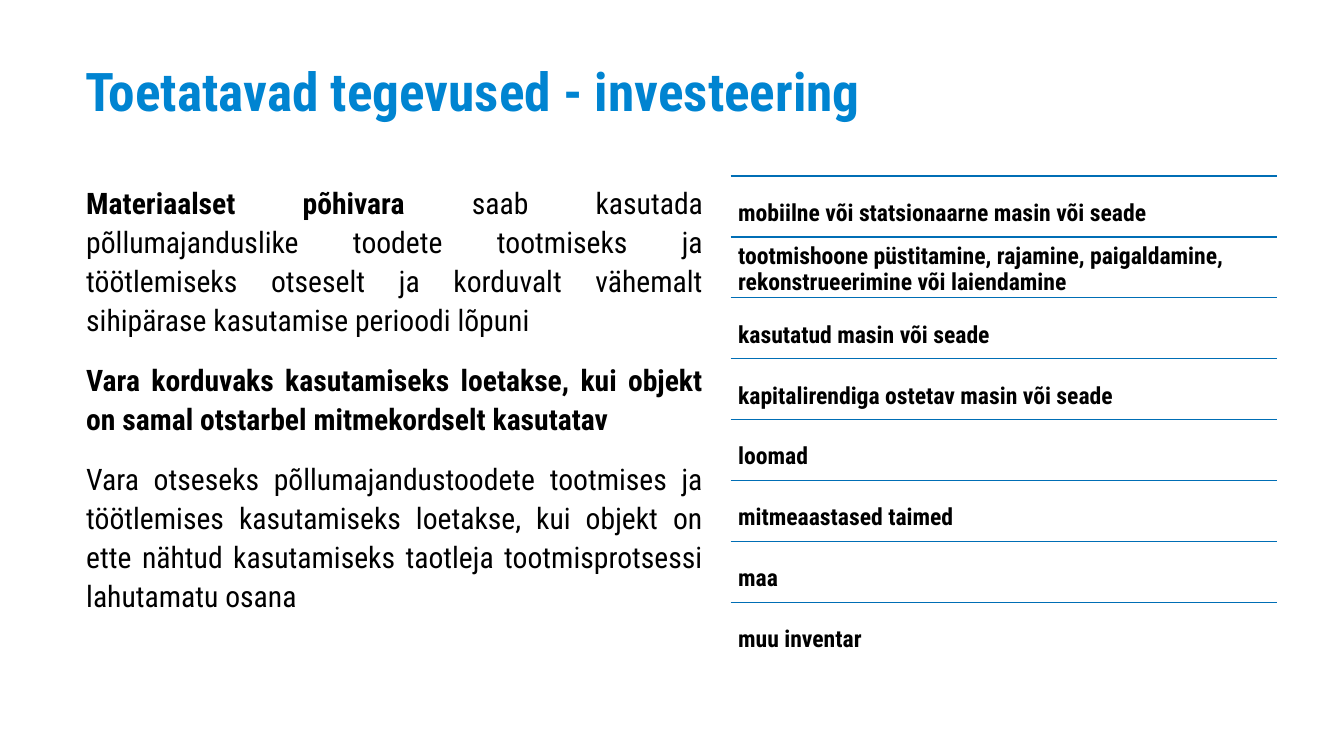
from dataclasses import dataclass

from lxml import etree
from pptx import Presentation
from pptx.dml.color import RGBColor
from pptx.enum.shapes import MSO_CONNECTOR
from pptx.enum.text import MSO_ANCHOR, PP_ALIGN
from pptx.oxml.ns import qn
from pptx.util import Emu, Pt

STRAIGHT = MSO_CONNECTOR.STRAIGHT
TOP = MSO_ANCHOR.TOP
LEFT = PP_ALIGN.LEFT
JUSTIFY = PP_ALIGN.JUSTIFY

TITLE = "Toetatavad tegevused - investeering"
BODY = [
    [
        ("Materiaalset põhivara ", True),
        ("saab kasutada põllumajanduslike toodete tootmiseks ja töötlemiseks "
         "otseselt ja korduvalt vähemalt sihipärase kasutamise perioodi lõpuni", False),
    ],
    [("Vara korduvaks kasutamiseks loetakse, kui objekt on samal otstarbel "
      "mitmekordselt kasutatav", True)],
    [("Vara otseseks põllumajandustoodete tootmises ja töötlemises kasutamiseks "
      "loetakse, kui objekt on ette nähtud kasutamiseks taotleja tootmisprotsessi "
      "lahutamatu osana", False)],
]
ITEMS = [
    ("mobiilne või statsionaarne masin või seade", 1.5),
    ("tootmishoone püstitamine, rajamine, paigaldamine, "
     "rekonstrueerimine või laiendamine", 0.9),
    ("kasutatud masin või seade", 1.5),
    ("kapitalirendiga ostetav masin või seade", 1.5),
    ("loomad", 1.5),
    ("mitmeaastased taimed", 1.5),
    ("maa", 1.5),
    ("muu inventar", 1.5),
]

SLIDE = (1260, 709)
TITLE_BOX = (70, 56, 1109, 112)
BODY_BOX = (71, 165, 598, 468)
LIST_BOX = (685, 165, 512, 457)


@dataclass(frozen=True)
class Theme:
    font: str = "Roboto Condensed"
    head: RGBColor = RGBColor(0x00, 0x84, 0xD1)
    text: RGBColor = RGBColor(0x00, 0x00, 0x00)
    rule: RGBColor = RGBColor(0x00, 0x6E, 0xB5)
    head_size: int = 36
    body_size: int = 20
    item_size: int = 16


THEME = Theme()


def px(n):
    return Emu(round(n * 9144))


def add_text(slide, box, paras, size, color, spacing, pads, align=LEFT, after=0):
    frame = slide.shapes.add_textbox(*map(px, box)).text_frame
    frame.word_wrap = True
    frame.vertical_anchor = TOP
    frame.margin_left = frame.margin_right = px(pads[0])
    frame.margin_top, frame.margin_bottom = px(pads[1]), px(pads[2])
    for i, parts in enumerate(paras):
        para = frame.add_paragraph() if i else frame.paragraphs[0]
        para.alignment = align
        para.line_spacing = spacing
        para.space_after = Pt(after)
        for words, bold in parts:
            run = para.add_run()
            run.text = words
            run.font.name = THEME.font
            run.font.size = Pt(size)
            run.font.bold = bold
            run.font.color.rgb = color


def add_rule(slide, left, top, width):
    rule = slide.shapes.add_connector(
        STRAIGHT, px(left), px(top), px(left + width), px(top))
    rule.line.color.rgb = THEME.rule
    rule.line.width = Pt(1)
    etree.SubElement(rule._element.spPr, qn("a:effectLst"))


def add_list(slide):
    left, top, width, height = LIST_BOX
    step = height / len(ITEMS)
    for i, (words, spacing) in enumerate(ITEMS):
        y = top + i * step
        add_rule(slide, left, y, width)
        add_text(slide, (left, y, width, step), [[(words, True)]],
                 THEME.item_size, THEME.text, spacing, (7, 7, 7))


def main():
    deck = Presentation()
    deck.slide_width, deck.slide_height = map(px, SLIDE)
    slide = deck.slides.add_slide(deck.slide_layouts[6])
    add_text(slide, BODY_BOX, BODY, THEME.body_size, THEME.text, 1.1,
             (10, 5, 5), JUSTIFY, 14.1)
    add_text(slide, TITLE_BOX, [[(TITLE, True)]], THEME.head_size, THEME.head,
             0.88, (10, 6, 5))
    add_list(slide)
    deck.save("out.pptx")


if __name__ == "__main__":
    main()
